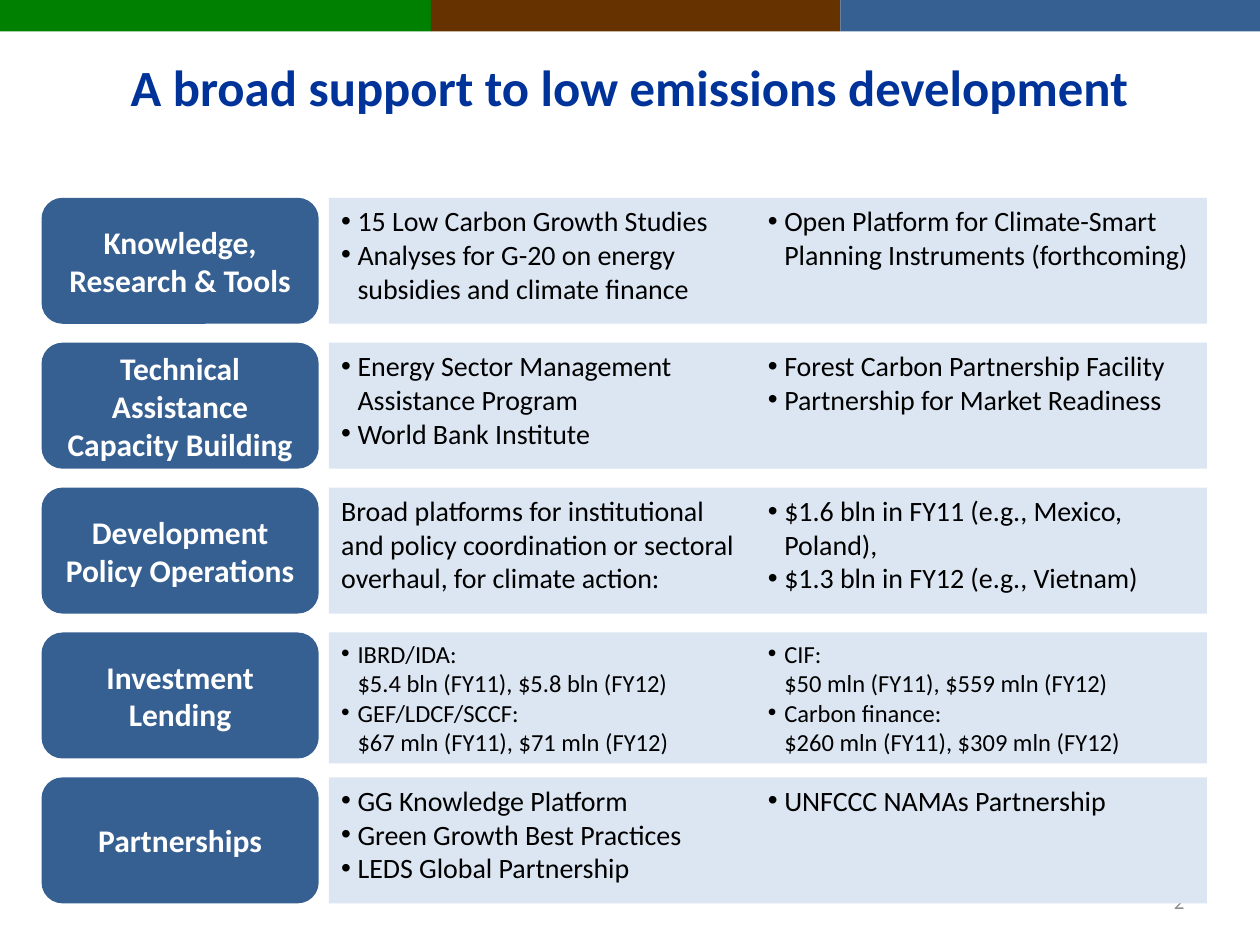
import pptx
import pptx.util
import pptx.dml.color
import pptx.enum.shapes
import pptx.enum.text
import pptx.oxml
import pptx.oxml.ns
from pptx.util import Inches

SHAPE = pptx.enum.shapes.MSO_SHAPE
ALIGN = pptx.enum.text.PP_ALIGN
MIDDLE = pptx.enum.text.MSO_ANCHOR.MIDDLE

GREEN, BROWN, BLUE = "008000", "663300", "376092"
PALE, NAVY, GRAY, WHITE, BLACK = "DCE6F2", "003399", "8C8C8C", "FFFFFF", "000000"

TITLE = "A broad support to low emissions development"
PAGE = "2"
BANDS = [(0, 3.42, GREEN), (3.42, 3.25, BROWN), (6.67, 3.33, BLUE)]

# label, text size, panel height, plain lead-in, bullets flowing over two columns
ROWS = [
    ("Knowledge, Research & Tools", 16, 1, None, [
        "15 Low Carbon Growth Studies",
        "Analyses for G-20 on energy subsidies and climate finance",
        "Open Platform for Climate-Smart Planning Instruments (forthcoming)"]),
    ("Technical Assistance\vCapacity Building", 16, 1, None, [
        "Energy Sector Management Assistance Program",
        "World Bank Institute",
        "Forest Carbon Partnership Facility",
        "Partnership for Market Readiness"]),
    ("Development Policy Operations", 16, 1,
     "Broad platforms for institutional\vand policy coordination or sectoral "
     "overhaul, for climate action:", [
        "$1.6 bln in FY11 (e.g., Mexico, Poland),",
        "$1.3 bln in FY12 (e.g., Vietnam)"]),
    ("Investment Lending", 14, 1.04, None, [
        "IBRD/IDA:\v$5.4 bln (FY11), $5.8 bln (FY12)",
        "GEF/LDCF/SCCF:\v$67 mln (FY11), $71 mln (FY12)",
        "CIF:\v$50 mln (FY11), $559 mln (FY12)",
        "Carbon finance:\v$260 mln (FY11), $309 mln (FY12)"]),
    ("Partnerships", 16, 1, None, [
        "GG Knowledge Platform",
        "Green Growth Best Practices",
        "LEDS Global Partnership",
        "UNFCCC NAMAs Partnership"]),
]
ROW_TOP, ROW_PITCH = 1.57, 1.15
LABEL_LEFT, LABEL_WIDTH, LABEL_HEIGHT = 0.33, 2.2, 1
PANEL_LEFT, PANEL_WIDTH = 2.61, 6.97
INDENT = Inches(0.13)


def rgb(value):
    return pptx.dml.color.RGBColor.from_string(value)


def add_box(s, kind, left, top, width, height, color):
    sp = s.shapes.add_shape(kind, Inches(left), Inches(top),
                            Inches(width), Inches(height))
    sp.shadow.inherit = False
    sp.fill.solid()
    sp.fill.fore_color.rgb = rgb(color)
    sp.line.fill.background()
    return sp


def write(p, text, size, color, align, bold=False):
    p.text = text
    p.alignment = align
    for r in p.runs:
        r.font.name = "Calibri"
        r.font.size = pptx.util.Pt(size)
        r.font.bold = bold
        r.font.color.rgb = rgb(color)


def add_bullet(p):
    pPr = p._p.get_or_add_pPr()
    pPr.set("marL", str(INDENT))
    pPr.set("indent", str(-INDENT))
    ns = pptx.oxml.ns.nsdecls("a")
    pPr.append(pptx.oxml.parse_xml(f'<a:buFont {ns} typeface="Arial"/>'))
    pPr.append(pptx.oxml.parse_xml(f'<a:buChar {ns} char="•"/>'))


def add_label(s, top, text):
    sp = add_box(s, SHAPE.ROUNDED_RECTANGLE, LABEL_LEFT, top,
                 LABEL_WIDTH, LABEL_HEIGHT, BLUE)
    tf = sp.text_frame
    tf.word_wrap = True
    tf.vertical_anchor = MIDDLE
    write(tf.paragraphs[0], text, 18, WHITE, ALIGN.CENTER, bold=True)


def add_panel(s, top, height, size, lead, bullets):
    sp = add_box(s, SHAPE.RECTANGLE, PANEL_LEFT, top, PANEL_WIDTH, height, PALE)
    tf = sp.text_frame
    tf.word_wrap = True
    tf.vertical_anchor = pptx.enum.text.MSO_ANCHOR.TOP
    tf.auto_size = pptx.enum.text.MSO_AUTO_SIZE.SHAPE_TO_FIT_TEXT
    tf._txBody.bodyPr.set("numCol", "2")
    lines = ([(lead, False)] if lead else []) + [(b, True) for b in bullets]
    for i, (text, bulleted) in enumerate(lines):
        p = tf.add_paragraph() if i else tf.paragraphs[0]
        if bulleted:
            add_bullet(p)
        write(p, text, size, BLACK, ALIGN.LEFT)


def main():
    prs = pptx.Presentation()
    prs.slide_width, prs.slide_height = Inches(10), Inches(7.5)
    s = prs.slides.add_slide(prs.slide_layouts[5])

    for left, width, color in BANDS:
        add_box(s, SHAPE.RECTANGLE, left, 0, width, 0.25, color)

    title = s.shapes.title
    title.left, title.top = Inches(0.5), Inches(0.42)
    title.width, title.height = Inches(9), Inches(0.53)
    tf = title.text_frame
    tf.vertical_anchor = MIDDLE
    tf.auto_size = pptx.enum.text.MSO_AUTO_SIZE.NONE
    write(tf.paragraphs[0], TITLE, 29, NAVY, ALIGN.CENTER, bold=True)

    number = s.shapes.add_textbox(Inches(7.17), Inches(6.95),
                                  Inches(2.33), Inches(0.4))
    tf = number.text_frame
    tf.word_wrap = True
    tf.vertical_anchor = MIDDLE
    write(tf.paragraphs[0], PAGE, 12, GRAY, ALIGN.RIGHT)

    for i, (label, size, height, lead, bullets) in enumerate(ROWS):
        top = ROW_TOP + i * ROW_PITCH
        add_label(s, top, label)
        add_panel(s, top, height, size, lead, bullets)

    prs.save("out.pptx")


if __name__ == "__main__":
    main()
